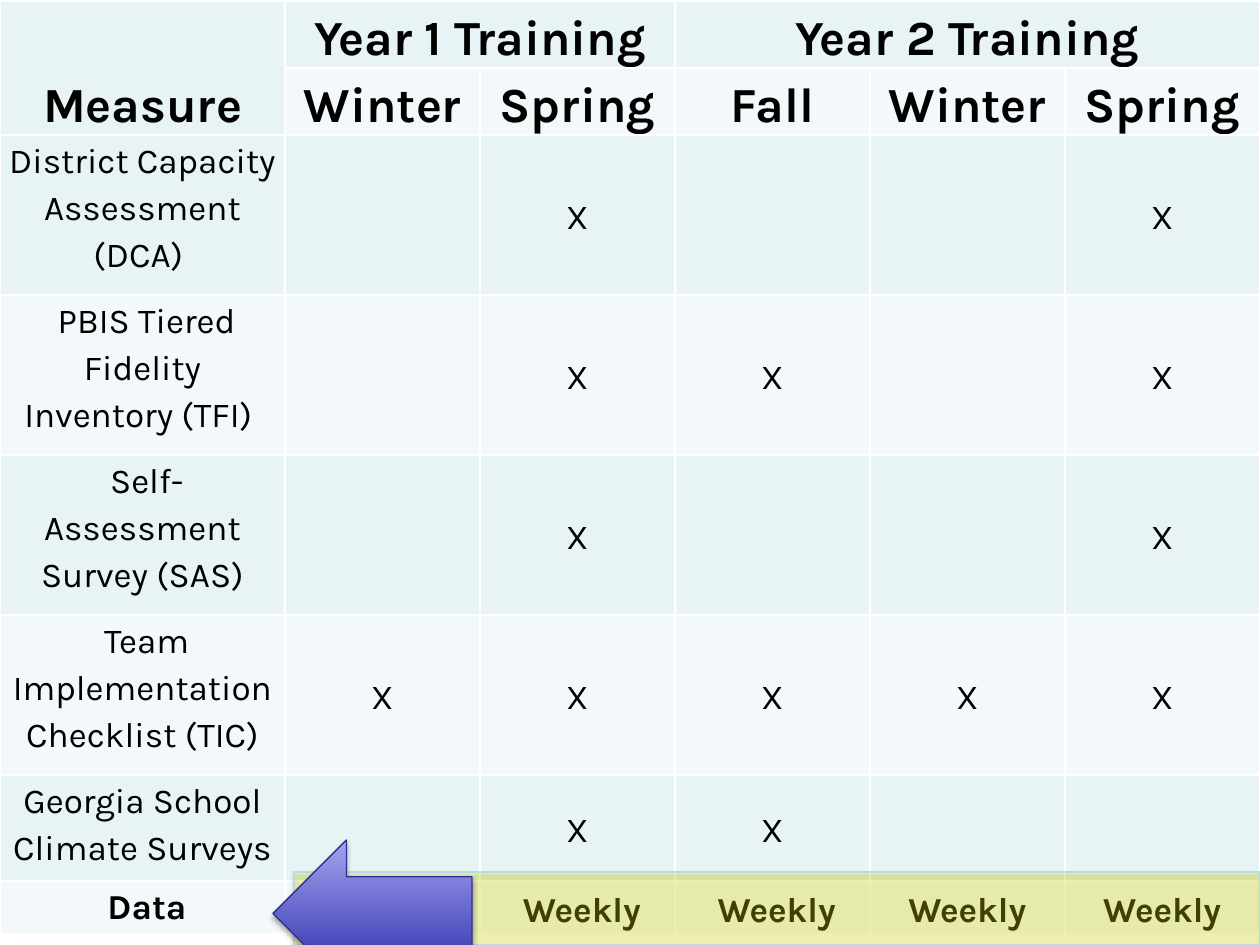
from typing import NamedTuple

from lxml import etree
from pptx import Presentation
from pptx.dml.color import RGBColor
from pptx.enum.shapes import MSO_SHAPE
from pptx.enum.text import MSO_ANCHOR, PP_ALIGN
from pptx.oxml import parse_xml
from pptx.oxml.ns import nsdecls, qn
from pptx.util import Pt

RECT, LEFT_ARROW = MSO_SHAPE.RECTANGLE, MSO_SHAPE.LEFT_ARROW
TOP, MIDDLE, BOTTOM = MSO_ANCHOR.TOP, MSO_ANCHOR.MIDDLE, MSO_ANCHOR.BOTTOM
CENTER = PP_ALIGN.CENTER

EMU_PER_PX = 914400 / 126
FONT = "Karla"
COLORS = {
    "text": "000000",
    "border": "FFFFFF",
    "band_dark": "E7F3F4",
    "band_light": "F3F9FA",
    "highlight": "FFFF00",
    "highlight_line": "B6DCDF",
    "arrow_dark": "2424A8",
    "arrow_light": "A4A4EF",
    "arrow_line": "2F2F98",
}


class Row(NamedTuple):
    height: int
    texts: list[str]
    size: int = 20
    bold: bool = False
    label_anchor: MSO_ANCHOR = TOP
    anchor: MSO_ANCHOR = MIDDLE


class Overlay(NamedTuple):
    kind: MSO_SHAPE
    left: int
    top: int
    width: int
    height: int
    line: str


def header(height: int, texts: list[str]) -> Row:
    return Row(height, texts, 28, True, BOTTOM, BOTTOM)


def measure(label: str, marks: str, height: int = 160) -> Row:
    """Row of a measure; marks has one character per season, X or a dot."""
    return Row(height, [label] + [mark.replace(".", "") for mark in marks])


COLUMNS = [285] + [195] * 5
ROWS = [
    header(68, ["Measure", "Year 1 Training", "", "Year 2 Training", "", ""]),
    header(67, ["", "Winter", "Spring", "Fall", "Winter", "Spring"]),
    measure("District Capacity Assessment (DCA) ", ".X..X"),
    measure(" PBIS Tiered Fidelity Inventory (TFI) ", ".XX.X"),
    measure(" Self-Assessment Survey (SAS)", ".X..X"),
    measure(" Team Implementation Checklist (TIC)", "XXXXX"),
    measure("Georgia School Climate Surveys", ".XX..", 106),
    Row(53, [" Data"] + [" Weekly"] * 3 + ["Weekly"] * 2, bold=True),
]
MERGES = [((0, 0), (1, 0)), ((0, 1), (0, 2)), ((0, 3), (0, 5))]

HIGHLIGHT = Overlay(RECT, 294, 872, 966, 73, "highlight_line")
ARROW = Overlay(LEFT_ARROW, 273, 840, 199, 147, "arrow_line")


def px(value: int) -> int:
    return round(value * EMU_PER_PX)


def rgb(name: str) -> RGBColor:
    return RGBColor.from_string(COLORS[name])


def set_borders(cell, top_width: int) -> None:
    tc_pr = cell._tc.get_or_add_tcPr()
    for side in "LRTB":
        width = Pt(top_width if side == "T" else 1)
        tc_pr.append(parse_xml(
            f'<a:ln{side} {nsdecls("a")} w="{width}"><a:solidFill>'
            f'<a:srgbClr val="{COLORS["border"]}"/></a:solidFill></a:ln{side}>'
        ))


def fill_cell(cell, text: str, row: Row, anchor: MSO_ANCHOR, band: str) -> None:
    cell.fill.solid()
    cell.fill.fore_color.rgb = rgb(band)
    cell.margin_left = cell.margin_right = px(8)
    cell.margin_top = cell.margin_bottom = 0
    cell.vertical_anchor = anchor
    p = cell.text_frame.paragraphs[0]
    p.text = text
    p.alignment = CENTER
    p.line_spacing = 1.15
    p.font.size = Pt(row.size)
    for r in p.runs:
        r.font.name = FONT
        r.font.size = Pt(row.size)
        r.font.bold = row.bold
        r.font.color.rgb = rgb("text")


def add_schedule(slide) -> None:
    frame = slide.shapes.add_table(
        len(ROWS), len(COLUMNS), 0, 0,
        px(sum(COLUMNS)), px(sum(row.height for row in ROWS)),
    )
    table = frame.table
    table.first_row = table.horz_banding = False
    for column, width in zip(table.columns, COLUMNS):
        column.width = px(width)
    for i, row in enumerate(ROWS):
        table.rows[i].height = px(row.height)
        band = "band_light" if i % 2 else "band_dark"
        for j, text in enumerate(row.texts):
            cell = table.cell(i, j)
            set_borders(cell, 1 if i else 3)
            fill_cell(cell, text, row, anchor=row.anchor if j else row.label_anchor, band=band)
    for first, last in MERGES:
        table.cell(*first).merge(table.cell(*last))


def add_overlay(slide, item: Overlay):
    """Add an outlined shape with a soft shadow below it."""
    sp = slide.shapes.add_shape(
        item.kind, px(item.left), px(item.top), px(item.width), px(item.height)
    )
    sp.line.color.rgb = rgb(item.line)
    sp.line.width = Pt(0.75)
    sp.shadow.inherit = False
    sp._element.spPr.find(qn("a:effectLst")).append(parse_xml(
        f'<a:outerShdw {nsdecls("a")} blurRad="{Pt(3.1)}" dist="{Pt(1.8)}" '
        'dir="5400000" rotWithShape="0"><a:srgbClr val="000000">'
        '<a:alpha val="35000"/></a:srgbClr></a:outerShdw>'
    ))
    return sp


def add_highlight(slide) -> None:
    sp = add_overlay(slide, HIGHLIGHT)
    sp.fill.solid()
    sp.fill.fore_color.rgb = rgb("highlight")
    color = sp._element.spPr.find(qn("a:solidFill")).find(qn("a:srgbClr"))
    etree.SubElement(color, qn("a:alpha")).set("val", "25000")


def add_arrow(slide) -> None:
    sp = add_overlay(slide, ARROW)
    sp.fill.gradient()
    sp.fill.gradient_angle = 90
    for stop, name in zip(sp.fill.gradient_stops, ("arrow_dark", "arrow_light")):
        stop.color.rgb = rgb(name)


def main() -> None:
    prs = Presentation()
    prs.slide_width, prs.slide_height = px(1260), px(945)
    slide = prs.slides.add_slide(prs.slide_layouts[6])
    add_schedule(slide)
    add_highlight(slide)
    add_arrow(slide)
    prs.save("out.pptx")


if __name__ == "__main__":
    main()
